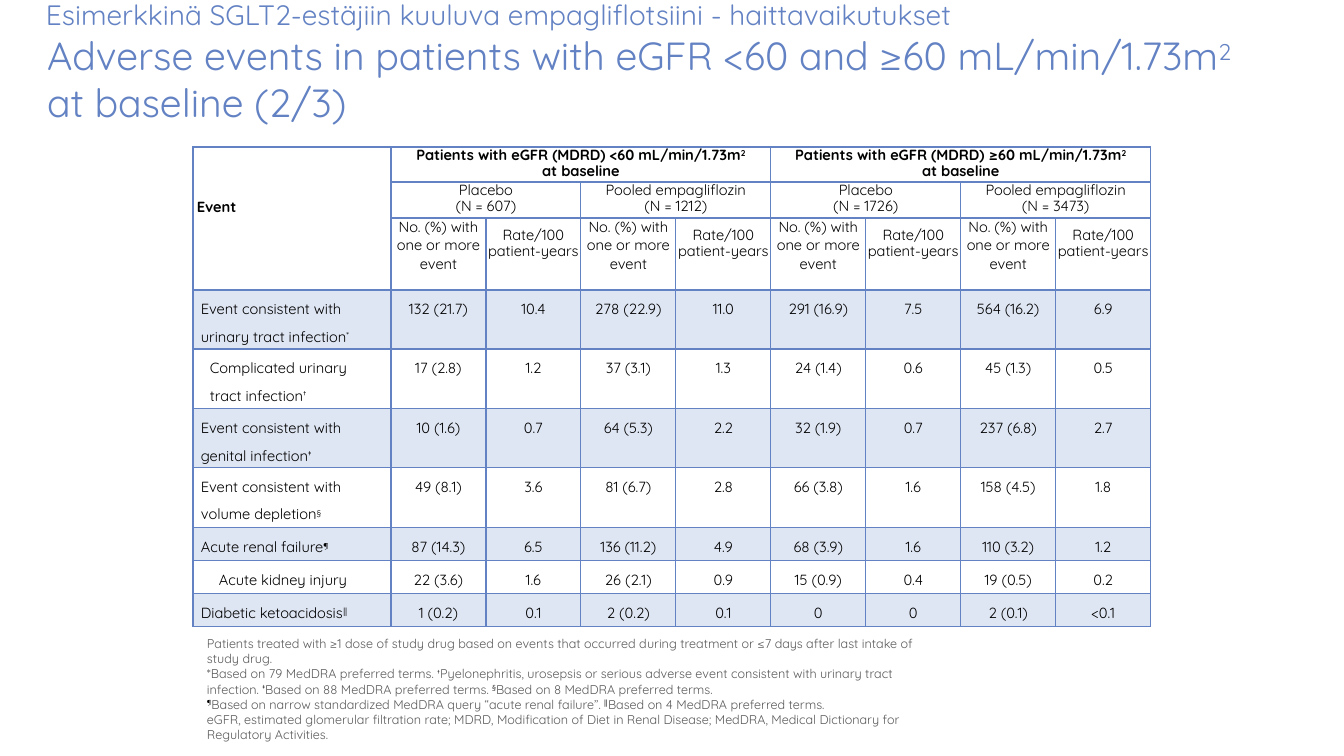
from dataclasses import dataclass

from lxml import etree
from pptx import Presentation
from pptx.dml.color import RGBColor
from pptx.enum.text import MSO_ANCHOR, MSO_AUTO_SIZE, PP_ALIGN
from pptx.oxml.ns import qn
from pptx.slide import Slide
from pptx.table import Table, _Cell
from pptx.text.text import TextFrame
from pptx.util import Emu, Pt

LEFT, CENTER = PP_ALIGN.LEFT, PP_ALIGN.CENTER
TOP = MSO_ANCHOR.TOP
FIXED = MSO_AUTO_SIZE.NONE
SCALE = 914400 / 100.8
FACE = "Quicksand"
BLUE, BLACK, GREY = "6382C3", "000000", "5A5A5A"
COLS = (198,) + (95,) * 8
ROWS = (35, 36, 72, 59, 60, 59, 60, 33, 33, 33)
HEAD = 3


@dataclass(frozen=True)
class Style:
    size: float
    color: str = BLACK
    bold: bool = False
    align: PP_ALIGN = LEFT
    space: float | Pt | None = None
    rise: int = 24
    mark: str | None = None


@dataclass(frozen=True)
class Event:
    label: str
    values: tuple[str, ...]
    indent: int = 8
    shade: bool = False


TIGHT = Pt(12)
BOLD = Style(10.5, bold=True)
GROUP = Style(10.5, bold=True, align=CENTER, space=TIGHT)
ARM = Style(10.5, align=CENTER, space=TIGHT)
VALUE = Style(10.5, align=CENTER)
LABEL = Style(10.5, space=1.5)

GROUPS = (
    "Patients with eGFR (MDRD) <60 mL/min/1.73m^2^\nat baseline",
    "Patients with eGFR (MDRD) ≥60 mL/min/1.73m^2^\nat baseline",
)
ARMS = (
    "Placebo\n(N = 607)",
    "Pooled empagliflozin\n(N = 1212)",
    "Placebo\n(N = 1726)",
    "Pooled empagliflozin\n(N = 3473)",
)
EVENTS = (
    Event("Event consistent with urinary tract infection^*^",
          ("132 (21.7)", "10.4", "278 (22.9)", "11.0",
           "291 (16.9)", "7.5", "564 (16.2)", "6.9"), shade=True),
    Event("Complicated urinary tract infection^†^",
          ("17 (2.8)", "1.2", "37 (3.1)", "1.3",
           "24 (1.4)", "0.6", "45 (1.3)", "0.5"), indent=17),
    Event("Event consistent with genital infection^‡^",
          ("10 (1.6)", "0.7", "64 (5.3)", "2.2",
           "32 (1.9)", "0.7", "237 (6.8)", "2.7"), shade=True),
    Event("Event consistent with\nvolume depletion^§^",
          ("49 (8.1)", "3.6", "81 (6.7)", "2.8",
           "66 (3.8)", "1.6", "158 (4.5)", "1.8")),
    Event("Acute renal failure^¶^",
          ("87 (14.3)", "6.5", "136 (11.2)", "4.9",
           "68 (3.9)", "1.6", "110 (3.2)", "1.2"), shade=True),
    Event("Acute kidney injury",
          ("22 (3.6)", "1.6", "26 (2.1)", "0.9",
           "15 (0.9)", "0.4", "19 (0.5)", "0.2"), indent=26),
    Event("Diabetic ketoacidosis^‖^",
          ("1 (0.2)", "0.1", "2 (0.2)", "0.1",
           "0", "0", "2 (0.1)", "<0.1"), shade=True),
)
NOTES = (
    "Patients treated with ≥1 dose of study drug based on events that occurred "
    "during treatment or ≤7 days after last intake of\n"
    "study drug.\n"
    "*Based on 79 MedDRA preferred terms. ^†^Pyelonephritis, urosepsis or serious "
    "adverse event consistent with urinary tract infection. ^‡^Based on 88 MedDRA "
    "preferred terms. ^§^Based on 8 MedDRA preferred terms.\n"
    "^¶^Based on narrow standardized MedDRA query “acute renal failure”. "
    "^‖^Based on 4 MedDRA preferred terms.\n"
    "eGFR, estimated glomerular filtration rate; MDRD, Modification of Diet in "
    "Renal Disease; MedDRA, Medical Dictionary for Regulatory Activities."
)


def px(n: int) -> Emu:
    return Emu(round(n * SCALE))


def rgb(color: str) -> RGBColor:
    return RGBColor.from_string(color)


def write(frame: TextFrame, text: str, style: Style) -> None:
    """Fill a frame; newlines part paragraphs and ^...^ marks a superscript."""
    for i, line in enumerate(text.split("\n")):
        para = frame.add_paragraph() if i else frame.paragraphs[0]
        para.alignment = style.align
        para.space_before = Pt(0)
        if style.space:
            para.line_spacing = style.space
        font = para.font
        font.name, font.size, font.bold = FACE, Pt(style.size), style.bold
        font.color.rgb = rgb(style.color)
        for j, part in enumerate(line.split("^")):
            if not part:
                continue
            run = para.add_run()
            run.text = part
            if j % 2:
                run._r.get_or_add_rPr().set("baseline", str(style.rise * 1000))
                if style.mark:
                    run.font.color.rgb = rgb(style.mark)


def setup(frame: TextFrame, left: int) -> None:
    frame.word_wrap, frame.auto_size = True, FIXED
    frame.vertical_anchor = TOP
    frame.margin_left, frame.margin_top = px(left), px(1)
    frame.margin_right = frame.margin_bottom = 0


def add_text(slide: Slide, box: tuple[int, ...], text: str, style: Style,
             left: int) -> None:
    frame = slide.shapes.add_textbox(*map(px, box)).text_frame
    setup(frame, left)
    write(frame, text, style)


def border(cell: _Cell, side: str, width: float) -> None:
    props = cell._tc.get_or_add_tcPr()
    line = etree.SubElement(props, qn(f"a:ln{side}"), w=str(Pt(width)))
    fill = etree.SubElement(line, qn("a:solidFill"))
    etree.SubElement(fill, qn("a:srgbClr"), val=BLUE)


def dress(cell: _Cell, row: int) -> None:
    """Give a cell its borders and its fill."""
    thick = {"T": row == HEAD, "B": row == HEAD - 1}
    for side in "LRTB":
        border(cell, side, 2.25 if thick.get(side) else 1)
    if row >= HEAD and EVENTS[row - HEAD].shade:
        cell.fill.solid()
        cell.fill.fore_color.rgb = rgb(BLUE)
        tint = cell._tc.tcPr.find(f"{qn('a:solidFill')}/{qn('a:srgbClr')}")
        etree.SubElement(tint, qn("a:alpha"), val="20000")
    else:
        cell.fill.background()


def put(table: Table, row: int, col: int, text: str, style: Style,
        top: int = 0, left: int = 0, right: int = 0) -> None:
    cell = table.cell(row, col)
    cell.margin_left, cell.margin_right = px(left), px(right)
    cell.margin_top, cell.margin_bottom = px(top), 0
    cell.vertical_anchor = TOP
    write(cell.text_frame, text, style)


def add_events(slide: Slide) -> None:
    frame = slide.shapes.add_table(len(ROWS), len(COLS), px(193), px(147),
                                   px(sum(COLS)), px(sum(ROWS)))
    table = frame.table
    table.first_row = table.horz_banding = False
    for col, width in zip(table.columns, COLS):
        col.width = px(width)
    for r, (row, height) in enumerate(zip(table.rows, ROWS)):
        row.height = px(height)
        for cell in row.cells:
            dress(cell, r)

    table.cell(0, 0).merge(table.cell(HEAD - 1, 0))
    put(table, 0, 0, "Event", BOLD, top=51, left=4)
    for r, (texts, span, style) in enumerate(((GROUPS, 4, GROUP), (ARMS, 2, ARM))):
        for i, text in enumerate(texts):
            col = 1 + i * span
            table.cell(r, col).merge(table.cell(r, col + span - 1))
            put(table, r, col, text, style)
    for col in range(1, len(COLS), 2):
        put(table, 2, col, "No. (%) with one or more event", VALUE)
        put(table, 2, col + 1, "Rate/100\npatient-years", ARM, top=9)
    for r, event in enumerate(EVENTS, HEAD):
        put(table, r, 0, event.label, LABEL, top=1, left=event.indent, right=20)
        for col, value in enumerate(event.values, 1):
            put(table, r, col, value, VALUE, top=10)


def main() -> None:
    deck = Presentation()
    deck.slide_width, deck.slide_height = px(1344), px(756)
    slide = deck.slides.add_slide(deck.slide_layouts[5])
    add_text(slide, (45, -3, 920, 36),
             "Esimerkkinä SGLT2-estäjiin kuuluva empagliflotsiini - haittavaikutukset",
             Style(20, BLUE), 1)
    title = slide.shapes.title
    title.left, title.top, title.width, title.height = map(px, (44, 30, 1244, 97))
    setup(title.text_frame, 3)
    write(title.text_frame,
          "Adverse events in patients with eGFR <60 and ≥60 mL/min/1.73m^2^\n"
          "at baseline (2/3)", Style(28, BLUE, rise=26))
    add_events(slide)
    add_text(slide, (203, 635, 730, 109), NOTES,
             Style(9, GREY, rise=28, mark=BLACK), 4)
    deck.save("out.pptx")


if __name__ == "__main__":
    main()
